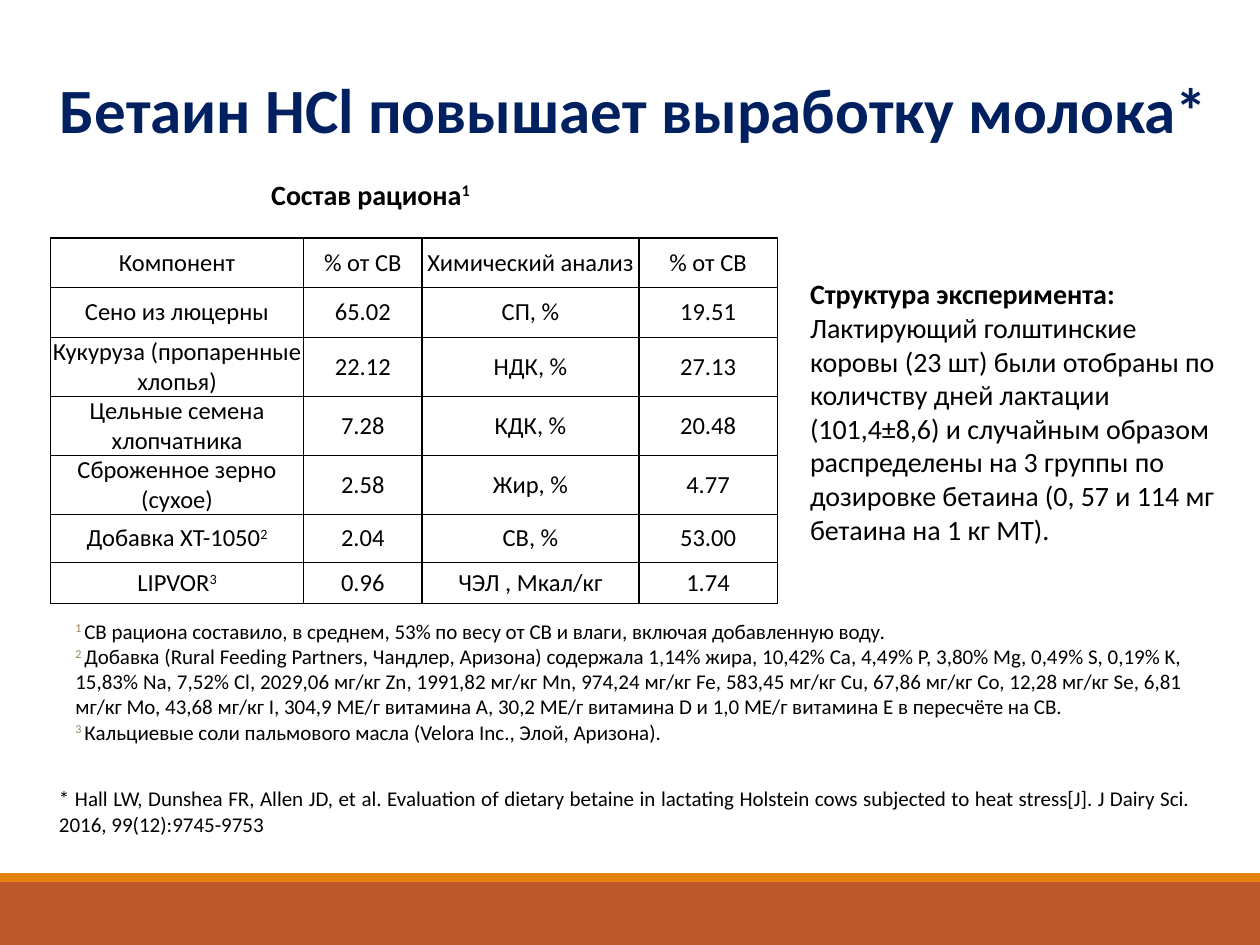
import pptx
import pptx.dml.color
import pptx.enum.shapes
import pptx.enum.text
import pptx.oxml
import pptx.oxml.ns
import pptx.util

Cm = pptx.util.Cm
ALIGN = pptx.enum.text.PP_ALIGN

COLORS = {
    "title": "002060",
    "text": "000000",
    "marker": "9B8357",
    "band": "BD582C",
    "strip": "E48312",
}

COLUMN_WIDTHS = [5.1, 2.39, 4.37, 2.79]
ROW_HEIGHTS = [1.0, 1.0, 1.19, 1.19, 1.19, 0.97, 0.83]
RATION = [
    ["Компонент", "% от СВ", "Химический анализ", "% от СВ"],
    ["Сено из люцерны", "65.02", "СП, %", "19.51"],
    ["Кукуруза (пропаренные хлопья)", "22.12", "НДК, %", "27.13"],
    ["Цельные семена хлопчатника", "7.28", "КДК, %", "20.48"],
    ["Сброженное зерно (сухое)", "2.58", "Жир, %", "4.77"],
    ["Добавка XT-1050^2", "2.04", "СВ, %", "53.00"],
    ["LIPVOR^3", "0.96", "ЧЭЛ , Мкал/кг", "1.74"],
]
NOTES = [
    "^1 ^СВ рациона составило, в среднем, 53% по весу от СВ и влаги, включая добавленную воду.",
    "^2 ^Добавка (Rural Feeding Partners, Чандлер, Аризона) содержала 1,14% жира, 10,42% Ca, "
    "4,49% P, 3,80% Mg, 0,49% S, 0,19% K, 15,83% Na, 7,52% Cl, 2029,06 мг/кг Zn, "
    "1991,82 мг/кг Mn, 974,24 мг/кг Fe, 583,45 мг/кг Cu, 67,86 мг/кг Co, 12,28 мг/кг Se, "
    "6,81 мг/кг Mo, 43,68 мг/кг I, 304,9 МЕ/г витамина A, 30,2 МЕ/г витамина D и "
    "1,0 МЕ/г витамина E в пересчёте на СВ.",
    "^3 ^Кальциевые соли пальмового масла (Velora Inc., Элой, Аризона).",
]
EXPERIMENT = (
    "Лактирующий голштинские коровы (23 шт) были отобраны по количству дней лактации "
    "(101,4±8,6) и случайным образом распределены на 3 группы по дозировке бетаина "
    "(0, 57 и 114 мг бетаина на 1 кг МТ)."
)
REFERENCE = (
    "* Hall LW, Dunshea FR, Allen JD, et al. Evaluation of dietary betaine in lactating "
    "Holstein cows subjected to heat stress[J]. J Dairy Sci. 2016, 99(12):9745-9753"
)


def rgb(name):
    return pptx.dml.color.RGBColor.from_string(COLORS[name])


def write_text(paragraph, text, size=12, color="text", bold=False, align=ALIGN.LEFT, marker="text"):
    paragraph.alignment = align
    for index, piece in enumerate(text.split("^")):
        if not piece:
            continue
        raised = index % 2 == 1
        run = paragraph.add_run()
        run.text = piece
        run.font.name = "Calibri"
        run.font.size = pptx.util.Pt(size)
        run.font.bold = bold
        run.font.color.rgb = rgb(marker if raised else color)
        if raised:
            run.font._element.set("baseline", "30000")


def add_frame(slide, left, top, width, height):
    frame = slide.shapes.add_textbox(Cm(left), Cm(top), Cm(width), Cm(height)).text_frame
    frame.word_wrap = True
    return frame


def add_bar(slide, left, top, width, height, color):
    shape = slide.shapes.add_shape(
        pptx.enum.shapes.MSO_SHAPE.RECTANGLE, Cm(left), Cm(top), Cm(width), Cm(height)
    )
    shape.shadow.inherit = False
    shape.fill.solid()
    shape.fill.fore_color.rgb = rgb(color)
    shape.line.fill.background()


def add_footer(slide, left, top, width, height):
    strip = 0.18
    add_bar(slide, left, top + strip, width, height - strip, "band")
    add_bar(slide, left, top, width, strip, "strip")


def add_heading(slide, left, top, width, height):
    frame = add_frame(slide, left, top, width, height)
    write_text(frame.paragraphs[0], "Бетаин HCl повышает выработку молока*",
               size=36, color="title", bold=True, align=ALIGN.RIGHT)


def set_borders(cell):
    properties = cell._tc.get_or_add_tcPr()
    for position, side in enumerate(("lnL", "lnR", "lnT", "lnB")):
        border = pptx.oxml.parse_xml(
            f'<a:{side} {pptx.oxml.ns.nsdecls("a")} w="12700"><a:solidFill>'
            f'<a:srgbClr val="{COLORS["text"]}"/></a:solidFill></a:{side}>'
        )
        properties.insert(position, border)


def add_ration(slide, left, top, width, height):
    caption = add_frame(slide, left - 0.08, top, 13.06, 0.94)
    write_text(caption.paragraphs[0], "Состав рациона^1", size=16, bold=True, align=ALIGN.CENTER)
    table_offset = 1.35
    table = slide.shapes.add_table(
        len(RATION), len(COLUMN_WIDTHS),
        Cm(left), Cm(top + table_offset), Cm(width), Cm(height - table_offset),
    ).table
    table.first_row = False
    table.horz_banding = False
    for column, column_width in zip(table.columns, COLUMN_WIDTHS):
        column.width = Cm(column_width)
    for row, row_height, values in zip(table.rows, ROW_HEIGHTS, RATION):
        row.height = Cm(row_height)
        for cell, value in zip(row.cells, values):
            cell.fill.background()
            cell.margin_left = cell.margin_right = cell.margin_top = cell.margin_bottom = 0
            cell.vertical_anchor = pptx.enum.text.MSO_ANCHOR.MIDDLE
            write_text(cell.text_frame.paragraphs[0], value, size=14, align=ALIGN.CENTER)
            set_borders(cell)


def add_experiment(slide, left, top, width, height):
    frame = add_frame(slide, left, top, width, height)
    write_text(frame.paragraphs[0], "Структура эксперимента:", size=16, bold=True)
    write_text(frame.add_paragraph(), EXPERIMENT, size=16)


def add_notes(slide, left, top, width, height):
    frame = add_frame(slide, left, top, width, height)
    for index, note in enumerate(NOTES):
        paragraph = frame.add_paragraph() if index else frame.paragraphs[0]
        write_text(paragraph, note, align=ALIGN.JUSTIFY, marker="marker")


def add_reference(slide, left, top, width, height):
    frame = add_frame(slide, left, top, width, height)
    write_text(frame.paragraphs[0], REFERENCE, align=ALIGN.JUSTIFY)


def main():
    presentation = pptx.Presentation()
    presentation.slide_width = Cm(25.4)
    presentation.slide_height = Cm(19.05)
    slide = presentation.slides.add_slide(presentation.slide_layouts[6])
    add_footer(slide, 0, 17.6, 25.4, 1.45)
    add_heading(slide, 0.61, 1.3, 24, 1.8)
    add_ration(slide, 1.02, 3.45, sum(COLUMN_WIDTHS), 8.72)
    add_notes(slide, 1.27, 12.34, 22.83, 2.82)
    add_experiment(slide, 16.08, 5.46, 8.99, 5.74)
    add_reference(slide, 0.94, 15.72, 23.32, 1.28)
    presentation.save("out.pptx")


if __name__ == "__main__":
    main()
